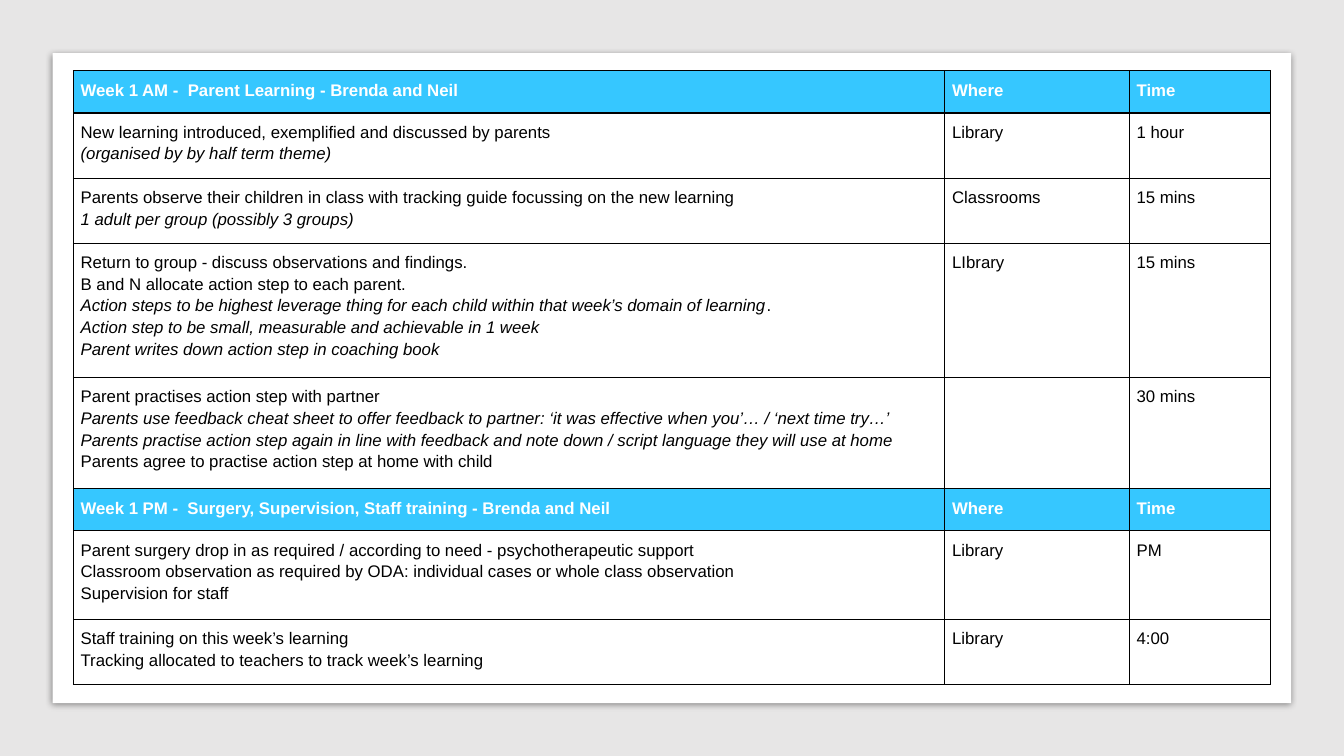
from typing import NamedTuple

import pptx
import pptx.dml.color
import pptx.enum.shapes
import pptx.oxml
import pptx.util
from lxml import etree

Pt = pptx.util.Pt
NAMESPACE = "http://schemas.openxmlformats.org/drawingml/2006/main"
BLACK, WHITE, GREY, BLUE = "000000", "FFFFFF", "E7E6E6", "36C7FF"
MARGIN = 5.2
COLUMN_WIDTHS = (622.5, 131.8, 100.8)


class Box(NamedTuple):
    left: float
    top: float
    width: float
    height: float
    fill: str
    shadow: bool = False


class Line(NamedTuple):
    text: str
    italic: bool = False
    upright_end: str = ""


class Session(NamedTuple):
    height: float
    lines: tuple[Line, ...]
    where: str
    time: str
    header: bool = False


BACKDROP = Box(0, 0, 960, 540, GREY)
CARD = Box(37.6, 38, 884.6, 464.2, WHITE, shadow=True)


def header(title: str) -> Session:
    return Session(30.1, (Line(title),), "Where", "Time", header=True)


SESSIONS = (
    header("Week 1 AM -  Parent Learning - Brenda and Neil"),
    Session(46.6, (
        Line("New learning introduced, exemplified and discussed by parents"),
        Line("(organised by by half term theme)", True),
    ), "Library", "1 hour"),
    Session(46.6, (
        Line("Parents observe their children in class with tracking guide focussing on the new learning"),
        Line("1 adult per group (possibly 3 groups)", True),
    ), "Classrooms", "15 mins"),
    Session(95.8, (
        Line("Return to group - discuss observations and findings."),
        Line("B and N allocate action step to each parent."),
        Line("Action steps to be highest leverage thing for each child within that week’s domain of learning", True, "."),
        Line("Action step to be small, measurable and achievable in 1 week", True),
        Line("Parent writes down action step in coaching book", True),
    ), "LIbrary", "15 mins"),
    Session(79.5, (
        Line("Parent practises action step with partner"),
        Line("Parents use feedback cheat sheet to offer feedback to partner: ‘it was effective when you’… / ‘next time try…’", True),
        Line("Parents practise action step again in line with feedback and note down / script language they will use at home", True),
        Line("Parents agree to practise action step at home with child"),
    ), "", "30 mins"),
    header("Week 1 PM -  Surgery, Supervision, Staff training - Brenda and Neil"),
    Session(63.2, (
        Line("Parent surgery drop in as required / according to need - psychotherapeutic support"),
        Line("Classroom observation as required by ODA: individual cases or whole class observation"),
        Line("Supervision for staff"),
    ), "Library", "PM"),
    Session(46.6, (
        Line("Staff training on this week’s learning"),
        Line("Tracking allocated to teachers to track week’s learning"),
    ), "Library", "4:00"),
)


def colour(value: str) -> pptx.dml.color.RGBColor:
    return pptx.dml.color.RGBColor.from_string(value)


def apply(target: object, formats: dict[str, object]) -> None:
    for name, value in formats.items():
        setattr(target, name, value)


def add_shadow(shape) -> None:
    effects = shape._element.spPr.find(f"{{{NAMESPACE}}}effectLst")
    effects.append(pptx.oxml.parse_xml(
        f'<a:outerShdw xmlns:a="{NAMESPACE}" blurRad="{Pt(5)}" dist="{Pt(1.4)}" '
        f'dir="5400000" algn="t" rotWithShape="0"><a:srgbClr val="{BLACK}">'
        '<a:alpha val="43000"/></a:srgbClr></a:outerShdw>'
    ))


def draw_box(page, box: Box) -> None:
    shape = page.shapes.add_shape(
        pptx.enum.shapes.MSO_SHAPE.RECTANGLE,
        Pt(box.left), Pt(box.top), Pt(box.width), Pt(box.height),
    )
    shape.shadow.inherit = False
    shape.fill.solid()
    shape.fill.fore_color.rgb = colour(box.fill)
    shape.line.fill.background()
    if box.shadow:
        add_shadow(shape)


def add_borders(cell) -> None:
    properties = cell._tc.get_or_add_tcPr()
    for side in ("lnL", "lnR", "lnT", "lnB"):
        border = etree.SubElement(properties, f"{{{NAMESPACE}}}{side}", w=str(Pt(1)))
        fill = etree.SubElement(border, f"{{{NAMESPACE}}}solidFill")
        etree.SubElement(fill, f"{{{NAMESPACE}}}srgbClr", val=BLACK)


def add_span(para, text: str, italic: bool, is_header: bool) -> None:
    span = para.add_run()
    span.text = text
    apply(span.font, {"name": "Arial", "size": Pt(12), "bold": is_header, "italic": italic})
    span.font.color.rgb = colour(WHITE if is_header else BLACK)


def write_cell(cell, lines: tuple[Line, ...], is_header: bool) -> None:
    sides = ("left", "right", "top", "bottom")
    apply(cell, {f"margin_{side}": Pt(MARGIN) for side in sides})
    add_borders(cell)
    if is_header:
        cell.fill.solid()
        cell.fill.fore_color.rgb = colour(BLUE)
    else:
        cell.fill.background()
    frame = cell.text_frame
    for index, line in enumerate(lines):
        para = frame.add_paragraph() if index else frame.paragraphs[0]
        para.line_spacing = 1.15
        if line.text:
            add_span(para, line.text, line.italic, is_header)
        if line.upright_end:
            add_span(para, line.upright_end, False, is_header)


def draw_timetable(page) -> None:
    table = page.shapes.add_table(
        len(SESSIONS), len(COLUMN_WIDTHS), Pt(52.4), Pt(50.6),
        Pt(sum(COLUMN_WIDTHS)), Pt(sum(session.height for session in SESSIONS)),
    ).table
    apply(table, {"first_row": False, "horz_banding": False})
    for column, width in zip(table.columns, COLUMN_WIDTHS):
        column.width = Pt(width)
    for row, session in zip(table.rows, SESSIONS):
        row.height = Pt(session.height)
        contents = (session.lines, (Line(session.where),), (Line(session.time),))
        for cell, lines in zip(row.cells, contents):
            write_cell(cell, lines, session.header)


def main() -> None:
    deck = pptx.Presentation()
    apply(deck, {"slide_width": Pt(960), "slide_height": Pt(540)})
    page = deck.slides.add_slide(deck.slide_layouts[6])
    for box in (BACKDROP, CARD):
        draw_box(page, box)
    draw_timetable(page)
    deck.save("out.pptx")


if __name__ == "__main__":
    main()
